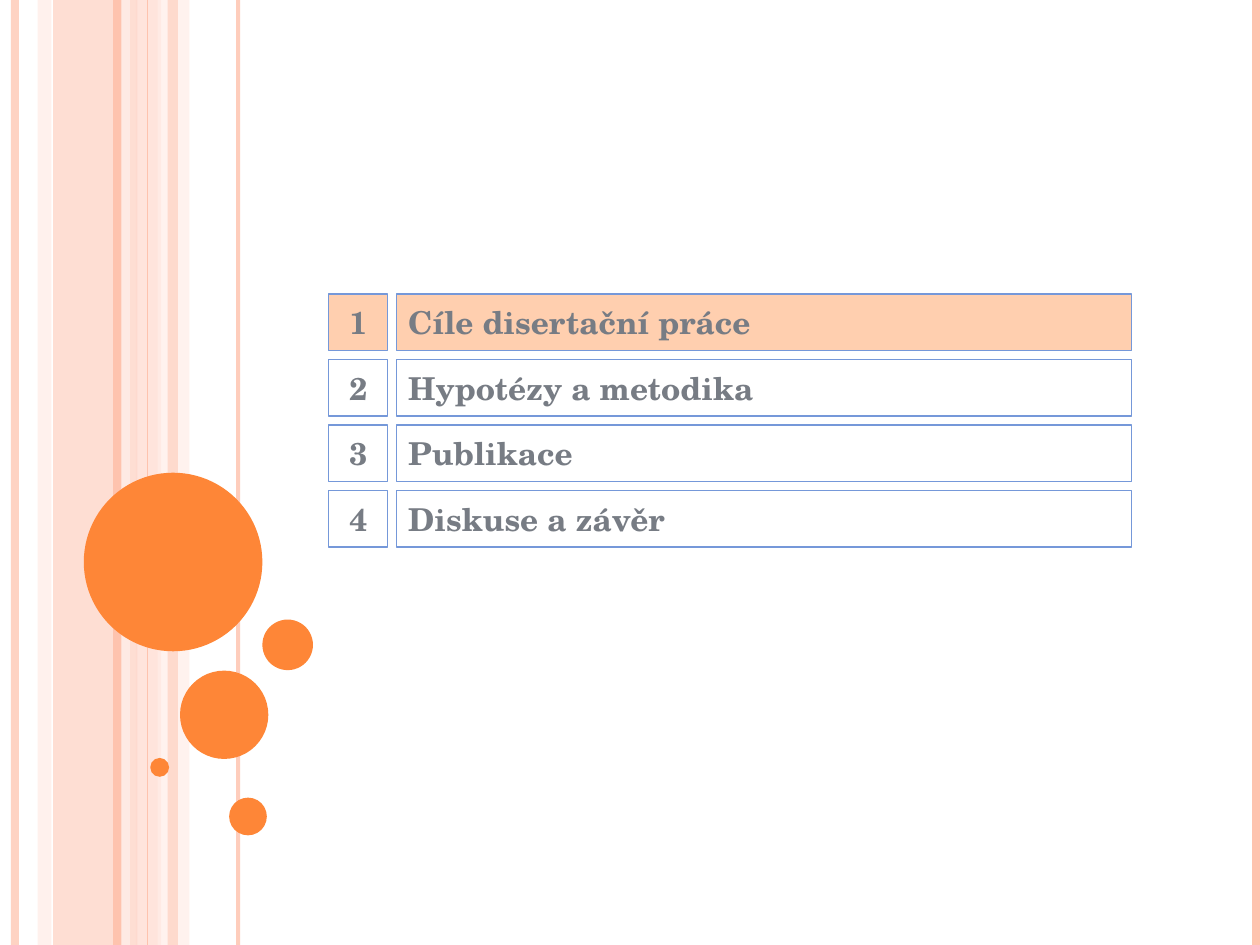
"""Build an agenda slide with a striped margin and circles."""
from dataclasses import dataclass

from lxml.etree import SubElement
from pptx import Presentation
from pptx.dml.color import RGBColor
from pptx.enum.shapes import MSO_CONNECTOR, MSO_SHAPE
from pptx.enum.text import MSO_ANCHOR, PP_ALIGN
from pptx.oxml.ns import qn
from pptx.util import Cm, Pt


@dataclass(frozen=True)
class Theme:
    rose: str = "FEC3AE"
    blush: str = "FFD9CE"
    pale: str = "FFEDE8"
    orange: str = "FE8637"
    peach: str = "FFCFAF"
    blue: str = "7598D9"
    grey: str = "777C84"
    font: str = "TeX Gyre Schola"
    size: float = 18
    edge: float = 0.75


LOOK = Theme()
WIDE, HIGH = 25.4, 19.05
BANDS = [
    (1.07, 1.7, LOOK.rose, 54),
    (0.76, 0.28, LOOK.blush, 36),
    (2.74, 0.51, LOOK.blush, 70),
    (3.18, 0.64, LOOK.pale, 71),
]
TOP_BAND = (3.38, 0.21, LOOK.rose, 51)
RULES = [
    (0.3, 4.5, LOOK.rose, 73),
    (2.54, 4.5, LOOK.pale, 83),
    (2.36, 4.5, LOOK.rose, 100),
    (4.8, 2.25, LOOK.rose, 82),
    (2.97, 0.75, LOOK.rose, 100),
    (25.32, 4.5, LOOK.rose, 100),
]
DOTS = [
    (1.69, 9.53, 3.6),
    (3.63, 13.52, 1.78),
    (3.03, 15.28, 0.38),
    (4.62, 16.08, 0.76),
    (5.29, 12.49, 1.02),
]
TOPICS = [
    "Cíle disertační práce",
    "Hypotézy a metodika",
    "Publikace",
    "Diskuse a závěr",
]
FIRST, PITCH, TALL = 5.93, 1.32, 1.14
NUMBER = (6.63, 1.19, PP_ALIGN.CENTER)
TITLE = (8.0, 14.81, PP_ALIGN.LEFT)


def apply(item, values):
    for name, value in values.items():
        setattr(item, name, value)


def fade(shape, alpha):
    for color in shape._element.spPr.iter(qn("a:srgbClr")):
        SubElement(color, qn("a:alpha"), val=str(alpha * 1000))


def add_shape(slide, kind, box, fill=None, line=None):
    shape = slide.shapes.add_shape(kind, *map(Cm, box))
    shape.shadow.inherit = False
    for part, color in ((shape.fill, fill), (shape.line.fill, line)):
        if color:
            part.solid()
            part.fore_color.rgb = RGBColor.from_string(color)
        else:
            part.background()
    return shape


def add_band(slide, left, width, color, alpha):
    band = add_shape(slide, MSO_SHAPE.RECTANGLE, (left, 0, width, HIGH), color)
    fade(band, alpha)


def add_rule(slide, left, width, color, alpha):
    rule = slide.shapes.add_connector(
        MSO_CONNECTOR.STRAIGHT, Cm(left), Cm(0), Cm(left), Cm(HIGH))
    rule.line.width = Pt(width)
    rule.line.color.rgb = RGBColor.from_string(color)
    fade(rule, alpha)
    SubElement(rule._element.spPr, qn("a:effectLst"))


def add_cell(slide, text, column, top, fill):
    left, width, align = column
    cell = add_shape(slide, MSO_SHAPE.RECTANGLE, (left, top, width, TALL),
                     fill, LOOK.blue)
    cell.line.width = Pt(LOOK.edge)
    frame = cell.text_frame
    apply(frame, {
        "word_wrap": True, "vertical_anchor": MSO_ANCHOR.MIDDLE,
        "margin_left": Cm(0.23), "margin_right": Cm(0.23),
        "margin_top": Cm(0.13), "margin_bottom": Cm(0.13),
    })
    para = frame.paragraphs[0]
    para.alignment = align
    run = para.add_run()
    run.text = text
    apply(run.font, {"name": LOOK.font, "size": Pt(LOOK.size), "bold": True})
    run.font.color.rgb = RGBColor.from_string(LOOK.grey)


def main():
    deck = Presentation()
    apply(deck, {"slide_width": Cm(WIDE), "slide_height": Cm(HIGH)})
    slide = deck.slides.add_slide(deck.slide_layouts[6])
    for band in BANDS:
        add_band(slide, *band)
    for rule in RULES:
        add_rule(slide, *rule)
    add_band(slide, *TOP_BAND)
    for left, top, size in DOTS:
        add_shape(slide, MSO_SHAPE.OVAL, (left, top, size, size), LOOK.orange)
    for index, topic in enumerate(TOPICS):
        top = FIRST + index * PITCH
        fill = None if index else LOOK.peach
        add_cell(slide, topic, TITLE, top, fill)
        add_cell(slide, str(index + 1), NUMBER, top, fill)
    deck.save("out.pptx")


if __name__ == "__main__":
    main()
